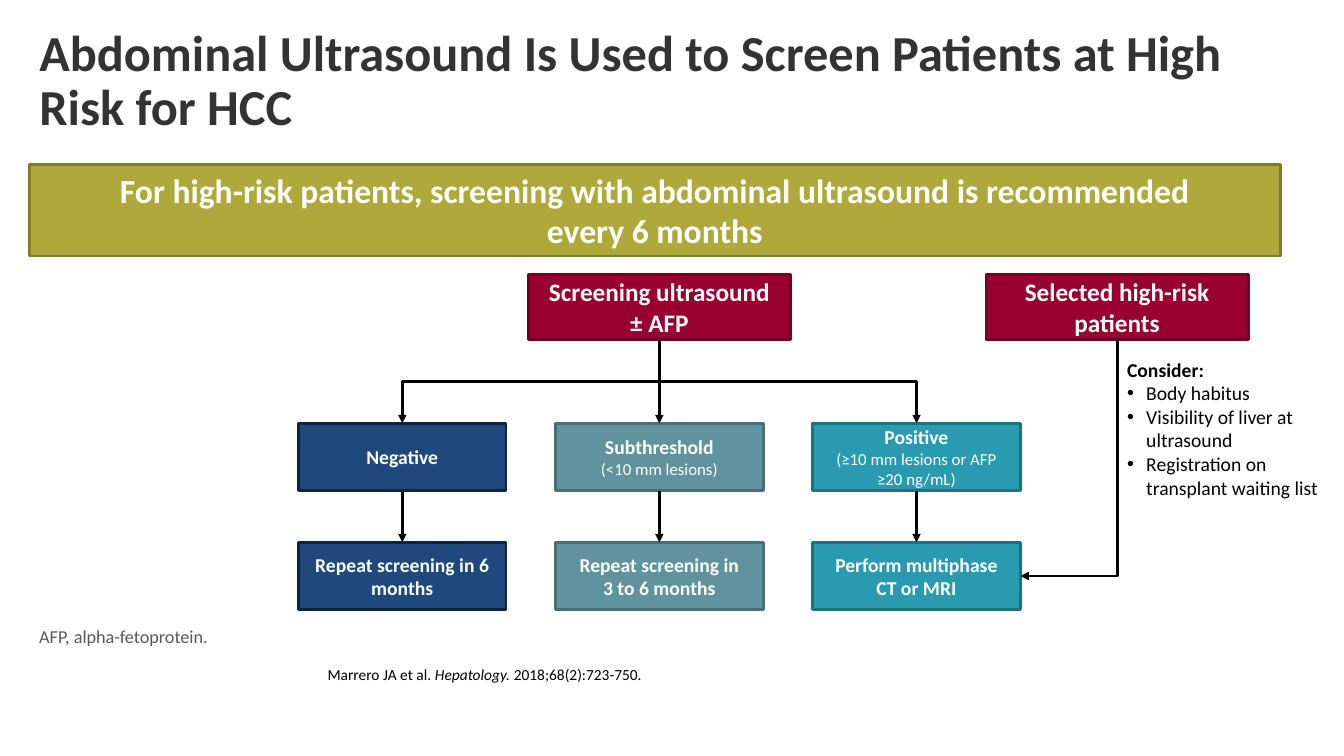
from lxml.etree import SubElement
from pptx import Presentation
from pptx.dml.color import RGBColor
from pptx.enum.shapes import MSO_CONNECTOR, MSO_SHAPE
from pptx.enum.text import MSO_ANCHOR, MSO_AUTO_SIZE, PP_ALIGN
from pptx.oxml.ns import qn
from pptx.util import Inches, Pt

WHITE = RGBColor(0xFF, 0xFF, 0xFF)
BLACK = RGBColor(0x00, 0x00, 0x00)
CHARCOAL = RGBColor(0x33, 0x33, 0x33)
GRAY = RGBColor(0x59, 0x59, 0x59)
OLIVE = (RGBColor(0xAF, 0xA8, 0x3B), RGBColor(0x81, 0x7C, 0x2C))
CRIMSON = (RGBColor(0x99, 0x00, 0x32), RGBColor(0x71, 0x00, 0x25))
NAVY = (RGBColor(0x1F, 0x49, 0x7D), RGBColor(0x0F, 0x24, 0x3E))
SAGE = (RGBColor(0x60, 0x93, 0x9D), RGBColor(0x48, 0x6E, 0x76))
TEAL = (RGBColor(0x2A, 0x9A, 0xB1), RGBColor(0x1F, 0x72, 0x83))

FONT = "Calibri"
MARGIN = 0.29
CONTENT_WIDTH = 12.78
TOP, LEFT, BOTTOM, RIGHT = range(4)

BRANCHES = [
    (NAVY, "Negative", None, ["Repeat screening in 6 months"]),
    (SAGE, "Subthreshold", "(<10 mm lesions)", ["Repeat screening in", "3 to 6 months"]),
    (TEAL, "Positive", "(≥10 mm lesions or AFP ≥20 ng/mL)", ["Perform multiphase", "CT or MRI"]),
]
CONSIDERATIONS = [
    "Body habitus",
    "Visibility of liver at ultrasound",
    "Registration on transplant waiting list",
]


def add_run(paragraph, text, size, color, bold=False, italic=False):
    run = paragraph.add_run()
    run.text = text
    run.font.name = FONT
    run.font.size = Pt(size)
    run.font.color.rgb = color
    run.font.bold = bold
    run.font.italic = italic


def add_lines(paragraph, lines, size, color):
    for index, line in enumerate(lines):
        if index:
            paragraph.add_line_break()
        add_run(paragraph, line, size, color, bold=True)


def add_box(slide, box, colors, lines, size, detail=None):
    node = slide.shapes.add_shape(MSO_SHAPE.RECTANGLE, *map(Inches, box))
    node.shadow.inherit = False
    node.fill.solid()
    node.fill.fore_color.rgb, node.line.color.rgb = colors
    node.line.width = Pt(2)
    frame = node.text_frame
    frame.word_wrap = True
    frame.vertical_anchor = MSO_ANCHOR.MIDDLE
    label = frame.paragraphs[0]
    label.alignment = PP_ALIGN.CENTER
    add_lines(label, lines, size, WHITE)
    if detail:
        explanation = frame.add_paragraph()
        explanation.alignment = PP_ALIGN.CENTER
        add_run(explanation, detail, 12, WHITE)
    return node


def add_text_area(slide, box):
    frame = slide.shapes.add_textbox(*map(Inches, box)).text_frame
    frame.word_wrap = True
    return frame


def add_arrow(slide, kind, source, source_site, target, target_site):
    arrow = slide.shapes.add_connector(kind, 0, 0, 0, 0)
    arrow.begin_connect(source, source_site)
    arrow.end_connect(target, target_site)
    arrow.line.color.rgb = BLACK
    arrow.line.width = Pt(2)
    SubElement(arrow.line._get_or_add_ln(), qn("a:tailEnd"), type="triangle")
    SubElement(arrow._element.spPr, qn("a:effectLst"))
    return arrow


def turn_downward(arrow, preset="bentConnector3"):
    dx, dy = arrow.end_x - arrow.begin_x, arrow.end_y - arrow.begin_y
    center_x = (arrow.begin_x + arrow.end_x) // 2
    center_y = (arrow.begin_y + arrow.end_y) // 2
    arrow.width, arrow.height = dy, abs(dx)
    arrow.left, arrow.top = center_x - dy // 2, center_y - abs(dx) // 2
    transform = arrow._element.spPr.find(qn("a:xfrm"))
    transform.set("rot", "16200000" if dx > 0 else "5400000")
    transform.set("flipH", "1" if dx > 0 else "0")
    arrow._element.spPr.find(qn("a:prstGeom")).set("prst", preset)


def add_title(slide, box):
    title = slide.shapes.title
    title.left, title.top, title.width, title.height = map(Inches, box)
    frame = title.text_frame
    frame.word_wrap = True
    frame.auto_size = MSO_AUTO_SIZE.NONE
    frame.vertical_anchor = MSO_ANCHOR.MIDDLE
    heading = frame.paragraphs[0]
    heading.alignment = PP_ALIGN.LEFT
    heading.line_spacing = 0.9
    add_run(heading, "Abdominal Ultrasound Is Used to Screen Patients at High Risk for HCC",
            36, CHARCOAL, bold=True)


def add_flowchart(slide, box):
    left, top, width, height = box
    node_width, node_height, root_width, root_height = 2.06, 0.67, 2.6, 0.65
    pitch = (width - node_width) / (len(BRANCHES) - 1)
    result_top, action_top = top + 1.48, top + height - node_height
    root_left = left + (width - root_width) / 2
    screening = add_box(slide, (root_left, top, root_width, root_height), CRIMSON,
                        ["Screening ultrasound", "± AFP"], 18)
    selected = add_box(slide, (root_left + 4.54, top, root_width, root_height), CRIMSON,
                       ["Selected high-risk patients"], 18)
    for column, (colors, finding, detail, action_lines) in enumerate(BRANCHES):
        x = left + column * pitch
        result = add_box(slide, (x, result_top, node_width, node_height), colors,
                         [finding], 14, detail)
        action = add_box(slide, (x, action_top, node_width, node_height), colors,
                         action_lines, 14)
        add_arrow(slide, MSO_CONNECTOR.STRAIGHT, result, BOTTOM, action, TOP)
        if column == len(BRANCHES) // 2:
            add_arrow(slide, MSO_CONNECTOR.STRAIGHT, screening, BOTTOM, result, TOP)
        else:
            turn_downward(add_arrow(slide, MSO_CONNECTOR.ELBOW, screening, BOTTOM, result, TOP))
    imaging = add_arrow(slide, MSO_CONNECTOR.ELBOW, selected, BOTTOM, action, RIGHT)
    turn_downward(imaging, "bentConnector2")


def add_considerations(slide, box):
    frame = add_text_area(slide, box)
    add_run(frame.paragraphs[0], "Consider:", 14, BLACK, bold=True)
    for consideration in CONSIDERATIONS:
        item = frame.add_paragraph()
        properties = item._p.get_or_add_pPr()
        properties.set("marL", str(Inches(0.19)))
        properties.set("indent", str(Inches(-0.19)))
        SubElement(properties, qn("a:buFont"), typeface="Arial")
        SubElement(properties, qn("a:buChar"), char="•")
        add_run(item, consideration, 14, BLACK)


def add_abbreviation(slide, box):
    abbreviation = add_text_area(slide, box).paragraphs[0]
    abbreviation.line_spacing = 0.9
    add_run(abbreviation, "AFP, alpha-fetoprotein.", 13, GRAY)


def add_citation(slide, box):
    citation = add_text_area(slide, box).paragraphs[0]
    citation.line_spacing = 0.9
    add_run(citation, "Marrero JA et al. ", 11, BLACK)
    add_run(citation, "Hepatology. ", 11, BLACK, italic=True)
    add_run(citation, "2018;68(2):723-750.", 11, BLACK)


def main():
    presentation = Presentation()
    presentation.slide_width, presentation.slide_height = Inches(13.33), Inches(7.5)
    slide = presentation.slides.add_slide(presentation.slide_layouts[5])
    add_title(slide, (MARGIN, 0.19, CONTENT_WIDTH, 1.25))
    add_box(slide, (MARGIN, 1.63, 12.41, 0.91), OLIVE,
            ["For high-risk patients, screening with abdominal ultrasound is recommended",
             "every 6 months"], 24)
    add_flowchart(slide, (2.96, 2.72, 7.16, 3.33))
    add_considerations(slide, (11.08, 3.5, 2.12, 1.51))
    add_abbreviation(slide, (MARGIN, 6.18, CONTENT_WIDTH, 0.3))
    add_citation(slide, (3.15, 6.57, 9.92, 0.8))
    presentation.save("out.pptx")


if __name__ == "__main__":
    main()
